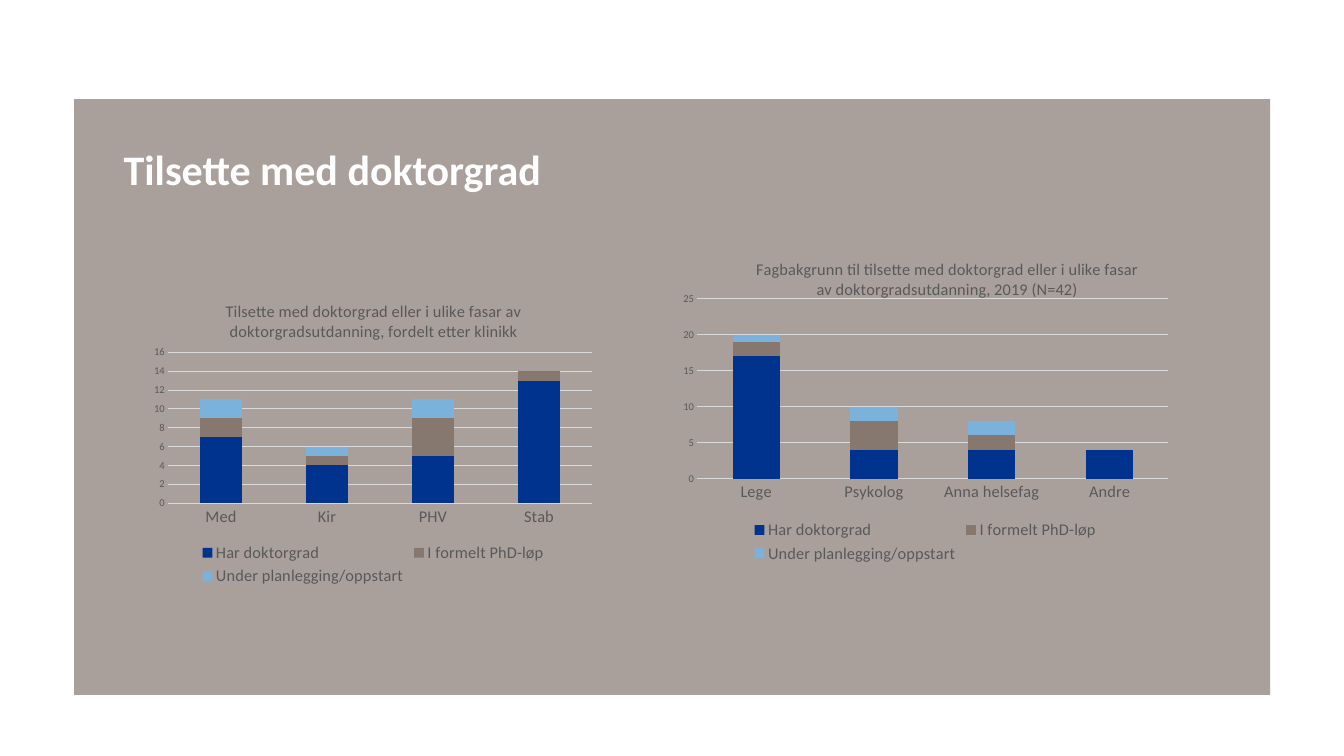
from pptx import Presentation
from pptx.chart.data import CategoryChartData
from pptx.dml.color import RGBColor
from pptx.enum.chart import XL_CHART_TYPE, XL_LEGEND_POSITION, XL_TICK_MARK
from pptx.enum.text import MSO_ANCHOR, MSO_AUTO_SIZE, PP_ALIGN
from pptx.oxml import parse_xml
from pptx.oxml.ns import nsdecls
from pptx.util import Cm, Pt

FONT = "Calibri"
GREY = "595959"
GRID = "D9D9D9"
STAGES = {
    "Har doktorgrad": "00338D",
    "I formelt PhD-løp": "86786F",
    "Under planlegging/oppstart": "7AB2DC",
}
CLINICS = {
    "heading": "Tilsette med doktorgrad eller i ulike fasar av doktorgradsutdanning, fordelt etter klinikk",
    "box": (4.39, 8.51, 13.79, 9.32),
    "groups": ["Med", "Kir", "PHV", "Stab"],
    "counts": [(7, 4, 5, 13), (2, 1, 4, 1), (2, 1, 2, 0)],
    "scale": {"minimum_scale": 0, "maximum_scale": 16, "major_unit": 2},
    "heading_at": {"x": 0.17, "y": 0.05},
    "plot_at": {"x": 0.05, "y": 0.23, "w": 0.93, "h": 0.49},
}
PROFESSIONS = {
    "heading": "Fagbakgrunn til tilsette med doktorgrad eller i ulike fasar av doktorgradsutdanning, 2019 (N=42)",
    "box": (20.32, 6.88, 15.32, 10.26),
    "groups": ["Lege", "Psykolog", "Anna helsefag", "Andre"],
    "counts": [(17, 4, 4, 4), (2, 4, 2, 0), (1, 2, 2, 0)],
    "scale": {"minimum_scale": 0, "maximum_scale": 25, "major_unit": 5},
    "heading_at": {"x": 0.16, "y": 0.08},
    "plot_at": {"x": 0.05, "y": 0.21, "w": 0.93, "h": 0.53},
}


def colour(code):
    return RGBColor.from_string(code)


def apply(target, values):
    for name, value in values.items():
        setattr(target, name, value)


def set_font(font, size, code, bold=False):
    apply(font, {"name": FONT, "size": Pt(size), "bold": bold})
    font.color.rgb = colour(code)


def set_line(line, code):
    line.color.rgb = colour(code)
    line.width = Pt(0.75)


def place(shape, box):
    apply(shape, dict(zip(("left", "top", "width", "height"), map(Cm, box))))


def manual_layout(position, inner=False):
    target = '<c:layoutTarget val="inner"/>' if inner else ""
    modes = "".join(f'<c:{key}Mode val="edge"/>' for key in ("x", "y"))
    values = "".join(f'<c:{key} val="{value}"/>' for key, value in position.items())
    return parse_xml(
        f'<c:layout {nsdecls("c")}><c:manualLayout>{target}{modes}{values}'
        "</c:manualLayout></c:layout>"
    )


def add_heading(slide):
    title = slide.shapes.title
    place(title, (2.24, 3, 36.17, 18.01))
    title.fill.solid()
    title.fill.fore_color.rgb = colour("AAA09B")
    frame = title.text_frame
    frame.text = "Tilsette med doktorgrad"
    apply(frame, {
        "margin_left": Cm(1.5), "margin_top": Cm(1.5),
        "margin_right": Cm(14), "margin_bottom": Cm(6.8),
        "vertical_anchor": MSO_ANCHOR.TOP, "word_wrap": True,
        "auto_size": MSO_AUTO_SIZE.NONE,
    })
    heading = frame.paragraphs[0]
    apply(heading, {"alignment": PP_ALIGN.LEFT, "line_spacing": 0.9})
    set_font(heading.runs[0].font, 36, "FFFFFF", True)


def format_axes(chart, scale):
    groups, counts = chart.category_axis, chart.value_axis
    for axis, size in ((groups, 14), (counts, 9)):
        apply(axis, {"major_tick_mark": XL_TICK_MARK.NONE, "minor_tick_mark": XL_TICK_MARK.NONE})
        set_font(axis.tick_labels.font, size, GREY)
    apply(counts, scale)
    set_line(groups.format.line, GRID)
    set_line(counts.major_gridlines.format.line, GRID)
    counts.format.line.fill.background()


def position_parts(chart, content):
    for layout in chart.element.xpath(".//c:title/c:layout | .//c:plotArea/c:layout"):
        layout.getparent().remove(layout)
    chart.element.xpath(".//c:chart/c:title/c:tx")[0].addnext(manual_layout(content["heading_at"]))
    chart.element.xpath(".//c:plotArea")[0].insert(0, manual_layout(content["plot_at"], True))


def add_stacked_chart(slide, content):
    data = CategoryChartData()
    data.categories = content["groups"]
    for stage, counts in zip(STAGES, content["counts"]):
        data.add_series(stage, counts)
    chart = slide.shapes.add_chart(
        XL_CHART_TYPE.COLUMN_STACKED, *map(Cm, content["box"]), data
    ).chart
    set_font(chart.font, 10, "000000")

    heading = chart.chart_title.text_frame
    heading.text = content["heading"]
    set_font(heading.paragraphs[0].runs[0].font, 14, GREY)

    chart.has_legend = True
    apply(chart.legend, {"position": XL_LEGEND_POSITION.BOTTOM, "include_in_layout": False})
    set_font(chart.legend.font, 14, GREY)

    plot = chart.plots[0]
    apply(plot, {"gap_width": 150, "overlap": 100, "vary_by_categories": False})
    for series, code in zip(plot.series, STAGES.values()):
        series.format.fill.solid()
        series.format.fill.fore_color.rgb = colour(code)

    format_axes(chart, content["scale"])
    position_parts(chart, content)


def main():
    deck = Presentation()
    apply(deck, {"slide_width": Cm(40.64), "slide_height": Cm(22.86)})
    slide = deck.slides.add_slide(deck.slide_layouts[5])
    add_heading(slide)
    for content in (PROFESSIONS, CLINICS):
        add_stacked_chart(slide, content)
    deck.save("out.pptx")


if __name__ == "__main__":
    main()
